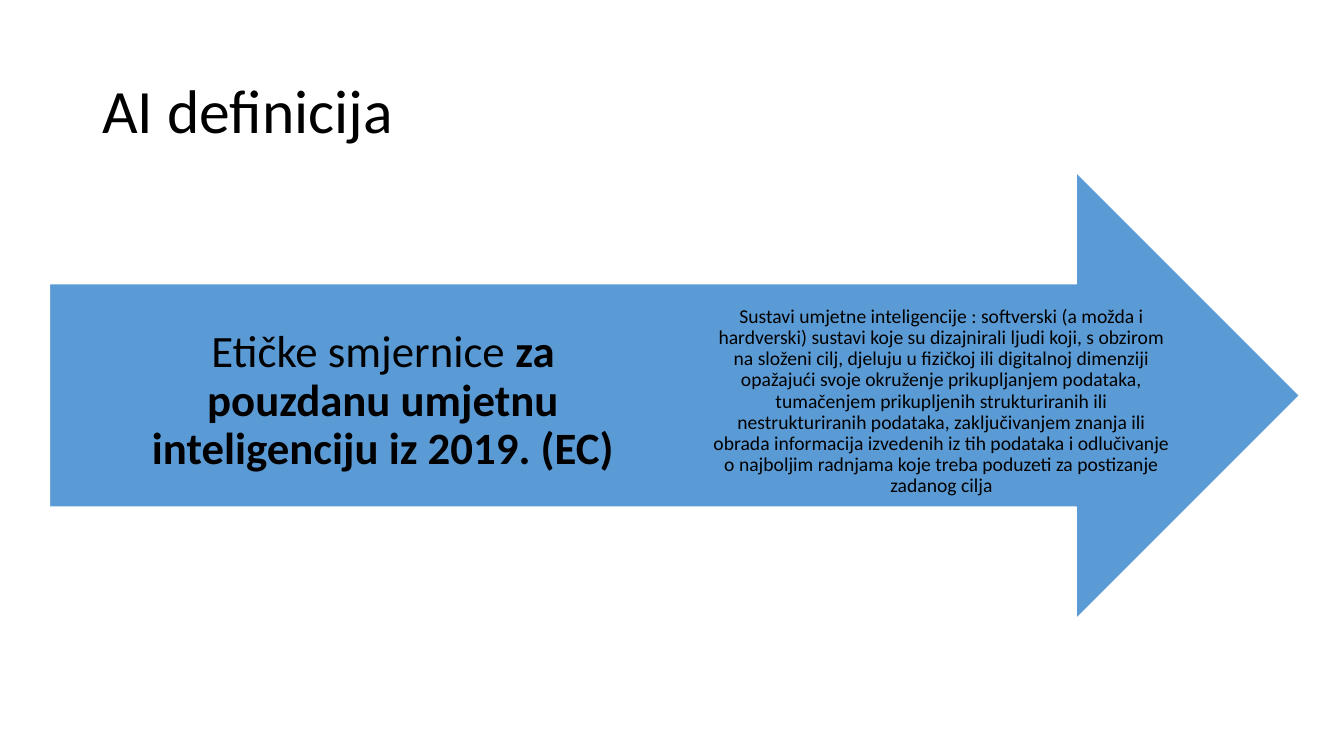
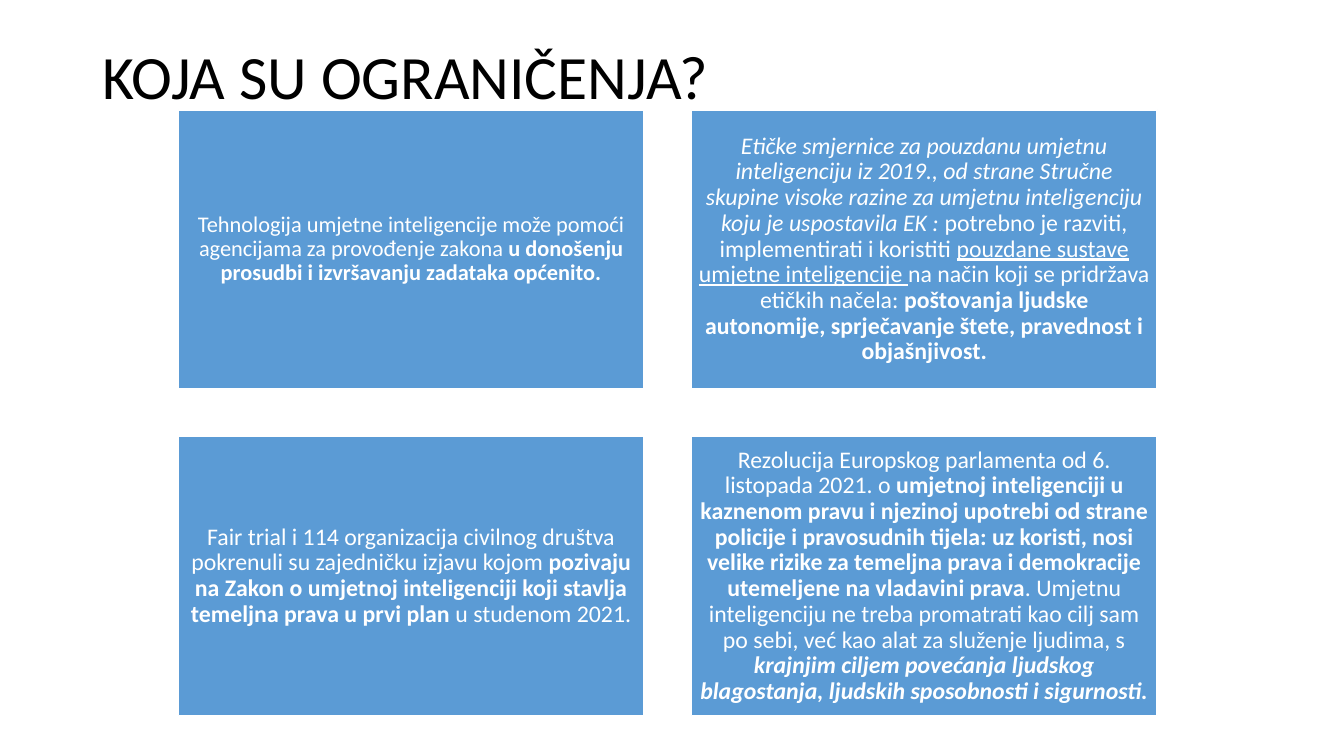
from pptx import Presentation
from pptx.dml.color import RGBColor
from pptx.enum import shapes, text
from pptx.util import Pt

BLUE = RGBColor(0x5B, 0x9B, 0xD5)
WHITE = RGBColor(0xFF, 0xFF, 0xFF)
BLACK = RGBColor(0, 0, 0)
FONT = "Calibri"
SHAPE = shapes.MSO_SHAPE
ALIGN = text.PP_ALIGN

ARROW = (35.3, 123, 893, 319)
WIDE = 332.6  # width of every text block
HIGH = 199.4
GAP = 33.9
LEFT, TOP = 127.4, 78.5

# Each run is its text and its styles: b bold, i italic, u underlined
GUIDE = [("Etičke smjernice ", ""),
         ("za pouzdanu umjetnu inteligenciju iz 2019. (EC)", "b")]
MEANING = [(
    "Sustavi umjetne inteligencije : softverski (a možda i hardverski) sustavi "
    "koje su dizajnirali ljudi koji, s obzirom na složeni cilj, djeluju u "
    "fizičkoj ili digitalnoj dimenziji opažajući svoje okruženje prikupljanjem "
    "podataka, tumačenjem prikupljenih strukturiranih ili nestrukturiranih "
    "podataka, zaključivanjem znanja ili obrada informacija izvedenih iz tih "
    "podataka i odlučivanje o najboljim radnjama koje treba poduzeti za "
    "postizanje zadanog cilja", "")]

LIMITS = [
    (16, [("Tehnologija umjetne inteligencije može pomoći agencijama za "
           "provođenje zakona ", ""),
          ("u donošenju prosudbi i izvršavanju zadataka općenito.", "b")]),
    (17, [("Etičke smjernice za pouzdanu umjetnu inteligenciju iz 2019., od "
           "strane Stručne skupine visoke razine za umjetnu inteligenciju koju "
           "je uspostavila EK : ", "i"),
          ("potrebno je razviti, implementirati i koristiti ", ""),
          ("pouzdane sustave umjetne inteligencije ", "u"),
          ("na način koji se pridržava etičkih načela: ", ""),
          ("poštovanja ljudske autonomije, sprječavanje štete, pravednost i "
           "objašnjivost.", "b")]),
    (17, [("Fair trial i 114 organizacija civilnog društva pokrenuli su "
           "zajedničku izjavu kojom ", ""),
          ("pozivaju na Zakon o umjetnoj inteligenciji koji stavlja temeljna "
           "prava u prvi plan ", "b"),
          ("u studenom 2021.", "")]),
    (17, [("Rezolucija Europskog parlamenta od 6. listopada 2021. o ", ""),
          ("umjetnoj inteligenciji u kaznenom pravu i njezinoj upotrebi od "
           "strane policije i pravosudnih tijela: uz koristi, nosi velike "
           "rizike za temeljna prava i demokracije utemeljene na vladavini "
           "prava", "b"),
          (". Umjetnu inteligenciju ne treba promatrati kao cilj sam po sebi, "
           "već kao alat za služenje ljudima, s ", ""),
          ("krajnjim ciljem povećanja ljudskog blagostanja, ljudskih "
           "sposobnosti i sigurnosti.", "bi")]),
]


class Deck:
    def __init__(self):
        self.prs = Presentation()
        self.prs.slide_width, self.prs.slide_height = Pt(960), Pt(540)
        self.slide = None

    def page(self, title, top):
        """Start a slide with its title."""
        self.slide = self.prs.slides.add_slide(self.prs.slide_layouts[6])
        self.label((66, top, 828, 104), [(title, "")], 44,
                   align=ALIGN.LEFT, pad=(7.2, 3.6))

    def label(self, area, runs, size, align=ALIGN.CENTER, pad=(0, 0)):
        box = self.slide.shapes.add_textbox(*map(Pt, area))
        self.fill_text(box, runs, size, BLACK, align, pad)

    def block(self, kind, area):
        """Add a blue shape with a thin white outline."""
        shape = self.slide.shapes.add_shape(kind, *map(Pt, area))
        shape.shadow.inherit = False
        shape.fill.solid()
        shape.fill.fore_color.rgb = BLUE
        shape.line.color.rgb = WHITE
        shape.line.width = Pt(1)
        return shape

    def card(self, area, runs, size):
        shape = self.block(SHAPE.RECTANGLE, area)
        self.fill_text(shape, runs, size, WHITE, ALIGN.CENTER, (5, 5))

    def fill_text(self, shape, runs, size, color, align, pad):
        frame = shape.text_frame
        frame.word_wrap = True
        frame.vertical_anchor = text.MSO_ANCHOR.MIDDLE
        frame.margin_left = frame.margin_right = Pt(pad[0])
        frame.margin_top = frame.margin_bottom = Pt(pad[1])
        para = frame.paragraphs[0]
        para.alignment = align
        para.line_spacing = 0.9
        for words, style in runs:
            run = para.add_run()
            run.text = words
            font = run.font
            font.name, font.size = FONT, Pt(size)
            font.color.rgb = color
            font.bold = "b" in style
            font.italic = "i" in style
            font.underline = "u" in style


def main():
    deck = Deck()

    deck.page("AI definicija", 29)
    deck.block(SHAPE.RIGHT_ARROW, ARROW)
    for left, runs, size in ((107.3, GUIDE, 32), (506.2, MEANING, 14)):
        deck.label((left, 207.4, WIDE, 159), runs, size)

    deck.page("KOJA SU OGRANIČENJA?", 5)
    for num, (size, runs) in enumerate(LIMITS):
        row, col = divmod(num, 2)
        area = (LEFT + col * (WIDE + GAP), TOP + row * (HIGH + GAP), WIDE, HIGH)
        deck.card(area, runs, size)

    deck.prs.save("out.pptx")


if __name__ == "__main__":
    main()
